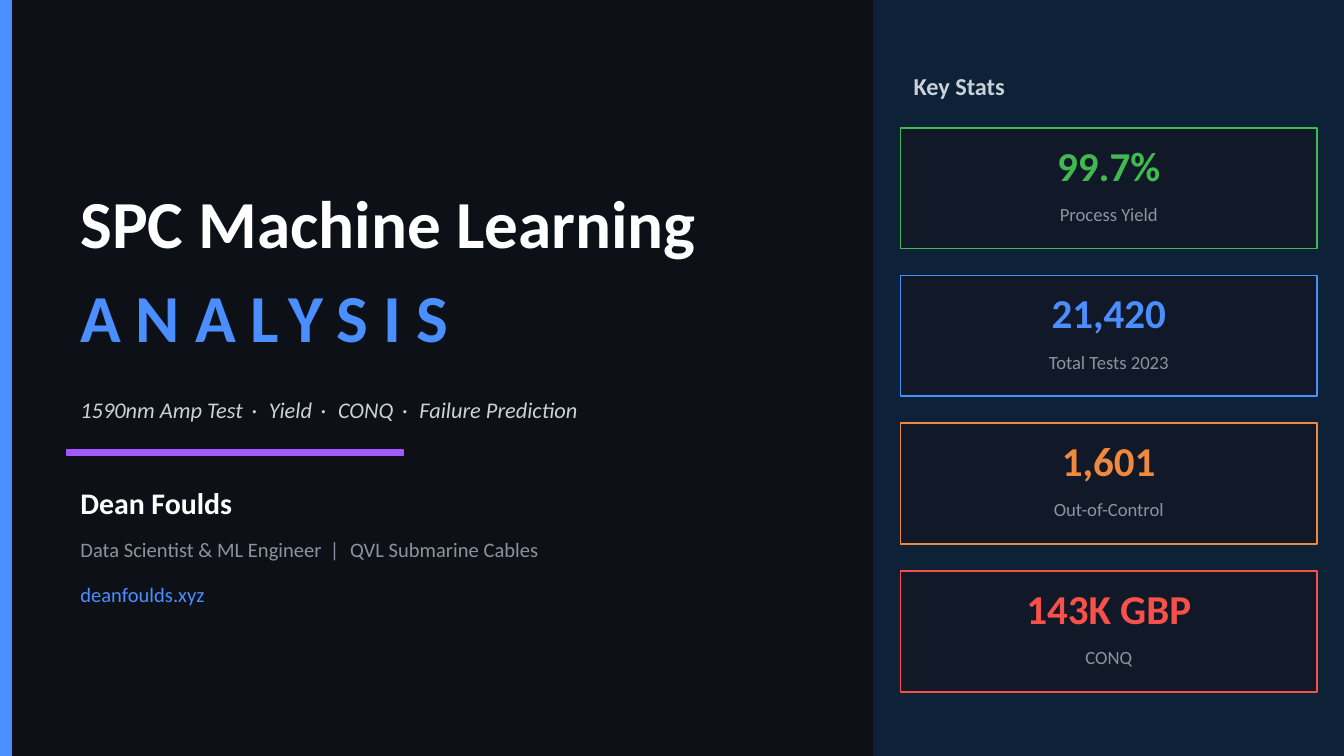
from pptx import Presentation
from pptx.dml.color import RGBColor
from pptx.enum.shapes import MSO_SHAPE
from pptx.enum.text import MSO_ANCHOR, PP_ALIGN
from pptx.util import Inches, Pt

RECTANGLE = MSO_SHAPE.RECTANGLE
MIDDLE = MSO_ANCHOR.MIDDLE
LEFT, CENTER = PP_ALIGN.LEFT, PP_ALIGN.CENTER

FONT = "Calibri"
COLORS = {
    "background": "0D1117", "panel": "0D2137", "card": "111827",
    "white": "FFFFFF", "light": "C9D1D9", "grey": "8B949E",
    "blue": "4B8EFF", "purple": "A259FF", "green": "3FB950",
    "orange": "F0883E", "red": "F85149",
}

# The 16:9 page is a grid of square cells, 100 columns by 56.25 rows
COLUMNS, ROWS = 100, 56.25
CELL = Inches(10) / COLUMNS

STATS = [
    ("99.7%", "Process Yield", "green"),
    ("21,420", "Total Tests 2023", "blue"),
    ("1,601", "Out-of-Control", "orange"),
    ("143K GBP", "CONQ", "red"),
]


def rgb(name):
    return RGBColor.from_string(COLORS[name])


def place(box):
    return [round(cells * CELL) for cells in box]


def add_block(page, box, fill, line=None):
    block = page.shapes.add_shape(RECTANGLE, *place(box))
    block.shadow.inherit = False
    block.fill.solid()
    block.fill.fore_color.rgb = rgb(fill)
    block.line.color.rgb = rgb(line or fill)
    block.line.width = Pt(1)


def add_span(para, text, spacing):
    span = para.add_run()
    span.text = text
    if spacing:
        span._r.get_or_add_rPr().set("spc", str(round(spacing * 100)))


def add_label(page, box, parts, size, color, bold=False, italic=False,
              align=LEFT, separator="", spacing=0):
    """Write the parts in one line; spacing (points) widens the separators,
    or the whole text where there is only one part."""
    frame = page.shapes.add_textbox(*place(box)).text_frame
    frame.word_wrap = True
    frame.vertical_anchor = MIDDLE
    para = frame.paragraphs[0]
    para.alignment = align
    font = para.font
    font.name, font.size = FONT, Pt(size)
    font.bold, font.italic = bold, italic
    font.color.rgb = rgb(color)
    for index, part in enumerate(parts):
        if index:
            add_span(para, separator, spacing)
        add_span(para, part, spacing if len(parts) == 1 else 0)


def add_title_region(page, box):
    left, top, width, height = box
    # Accent bar on the page edge
    add_block(page, (left, top, 0.8, height), "blue")
    text_left = left + 5

    # Title and subtitle
    add_label(page, (text_left, top + 12, 60, 9), ["SPC Machine Learning"],
              36, "white", bold=True)
    add_label(page, (text_left, top + 20, 60, 7), ["ANALYSIS"],
              36, "blue", bold=True, spacing=8)
    add_label(page, (text_left, top + 28.5, 58, 4),
              ["1590nm Amp Test", "Yield", "CONQ", "Failure Prediction"],
              12, "light", italic=True, separator=" · ", spacing=1.8)
    add_block(page, (text_left, top + 33.5, 25, 0.4), "purple")

    # Author
    add_label(page, (text_left, top + 35.5, 50, 3.8), ["Dean Foulds"],
              16, "white", bold=True)
    add_label(page, (text_left, top + 39.3, 58, 3.2),
              ["Data Scientist & ML Engineer", "QVL Submarine Cables"],
              11, "grey", separator=" | ", spacing=1.65)
    add_label(page, (text_left, top + 42.8, 50, 2.8), ["deanfoulds.xyz"],
              11, "blue")


def add_stat_card(page, box, value, caption, color):
    left, top, width, height = box
    add_block(page, box, "card", color)
    add_label(page, (left, top + 0.5, width, height / 2), [value],
              22, color, bold=True, align=CENTER)
    add_label(page, (left, top + 5, width, 2.8), [caption],
              10, "grey", align=CENTER)


def add_stats_panel(page, box):
    left, top, width, height = box
    margin, card_height, gap = 2, 9, 2
    add_block(page, box, "panel")
    add_label(page, (left + margin, top + 4.5, 30, 3.8), ["Key Stats"],
              13, "light", bold=True)
    for index, stat in enumerate(STATS):
        card_top = top + 9.5 + index * (card_height + gap)
        card = (left + margin, card_top, width - 2 * margin, card_height)
        add_stat_card(page, card, *stat)


def main():
    deck = Presentation()
    deck.slide_width, deck.slide_height = place((COLUMNS, ROWS))
    page = deck.slides.add_slide(deck.slide_layouts[6])
    page.background.fill.solid()
    page.background.fill.fore_color.rgb = rgb("background")
    add_title_region(page, (0, 0, 65, ROWS))
    add_stats_panel(page, (65, 0, 35, ROWS))
    deck.save("out.pptx")


if __name__ == "__main__":
    main()
